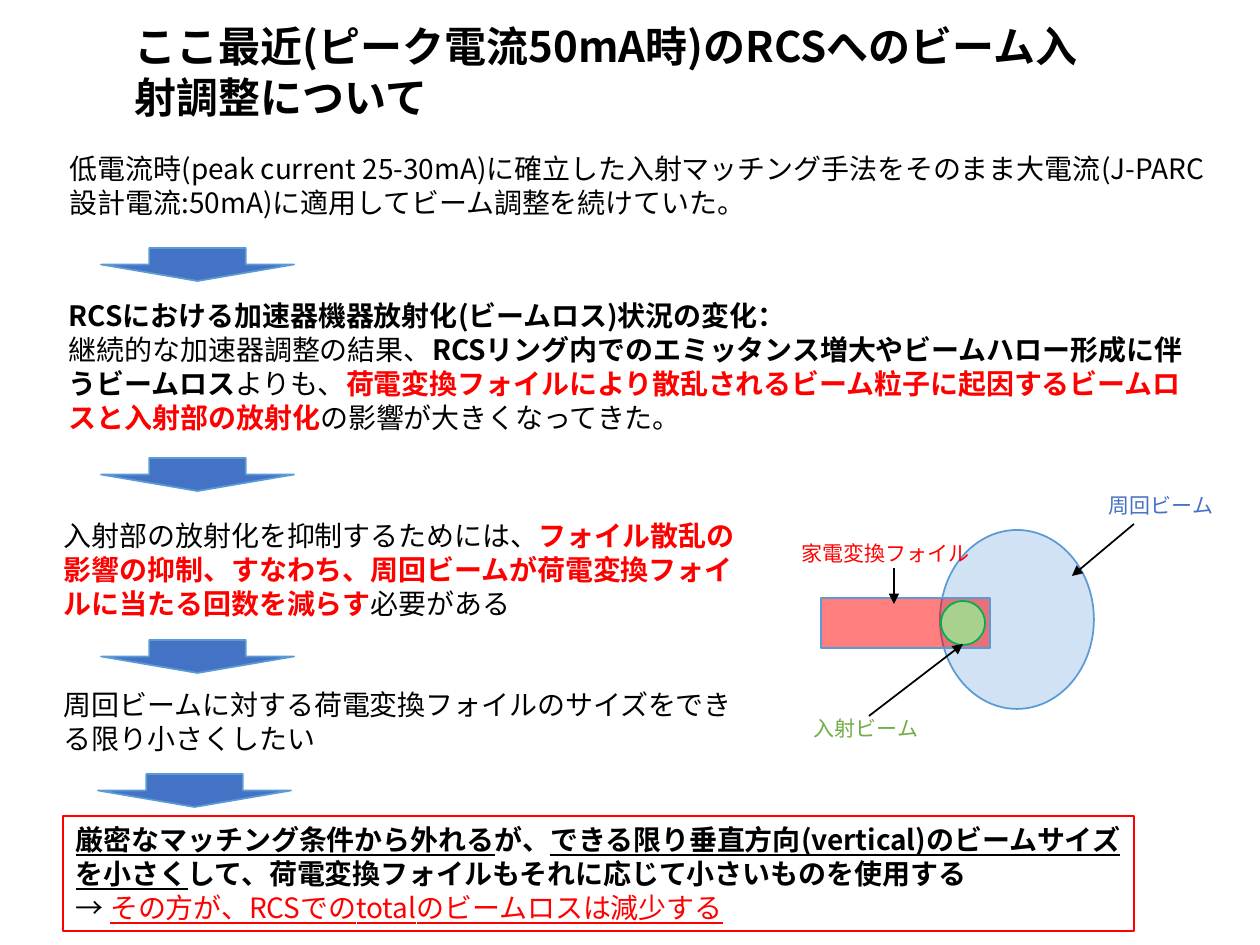
from lxml import etree
from pptx import Presentation
from pptx.dml.color import RGBColor
from pptx.enum.shapes import MSO_CONNECTOR, MSO_SHAPE
from pptx.enum.text import MSO_ANCHOR, MSO_AUTO_SIZE, PP_ALIGN
from pptx.oxml.ns import qn
from pptx.util import Pt

PX = 914400 // 126
FONT = "Noto Sans CJK JP"
LINE_PITCH = 1.21
COLORS = {
    "black": "000000", "red": "FF0000", "blue": "4472C4", "outline": "5B9BD5",
    "beam": "9DC3E6", "injected": "A9D18E", "injected_line": "00B050",
    "green": "70AD47",
}


def emu(*lengths):
    return [n * PX for n in lengths]


def rgb(name):
    return RGBColor.from_string(COLORS[name])


def write(tf, paras, size=16, color="black", inset=6, wrap=True, gap=0,
          anchor=MSO_ANCHOR.TOP):
    """Each run is (text, flags): b = bold, u = underlined, r = red."""
    tf.auto_size = MSO_AUTO_SIZE.NONE
    tf.word_wrap = wrap
    tf.vertical_anchor = anchor
    tf.margin_left = tf.margin_right = inset * PX
    tf.margin_top = tf.margin_bottom = 6 * PX
    for i, runs in enumerate(paras):
        p = tf.add_paragraph() if i else tf.paragraphs[0]
        p.alignment = PP_ALIGN.LEFT
        p.line_spacing = Pt(round(size * LINE_PITCH, 1))
        p.space_before = Pt(gap if i else 0)
        for text, flags in runs:
            r = p.add_run()
            r.text = text
            f = r.font
            f.name, f.size = FONT, Pt(size)
            f.bold, f.underline = "b" in flags, "u" in flags
            f.color.rgb = rgb("red" if "r" in flags else color)
            ea = etree.SubElement(r._r.get_or_add_rPr(), qn("a:ea"))
            ea.set("typeface", FONT)


def add_text(shapes, box, paras, **style):
    tb = shapes.add_textbox(*emu(*box))
    write(tb.text_frame, paras, **style)


def add_shape(shapes, kind, box, fill, line, alpha=None):
    sp = shapes.add_shape(kind, *emu(*box))
    sp.shadow.inherit = False
    if fill:
        sp.fill.solid()
        sp.fill.fore_color.rgb = rgb(fill)
    else:
        sp.fill.background()
    if alpha:
        clr = sp._element.spPr.find(qn("a:solidFill"))[0]
        etree.SubElement(clr, qn("a:alpha")).set("val", str(alpha * 1000))
    sp.line.color.rgb = rgb(line)
    sp.line.width = Pt(1)
    return sp


def add_pointer(shapes, x1, y1, x2, y2):
    c = shapes.add_connector(MSO_CONNECTOR.STRAIGHT, *emu(x1, y1, x2, y2))
    c.line.color.rgb = rgb("black")
    c.line.width = Pt(1)
    etree.SubElement(c.line._get_or_add_ln(), qn("a:tailEnd")).set("type", "triangle")
    etree.SubElement(c._element.spPr, qn("a:effectLst"))


def add_title(s, box, text):
    title = s.shapes.title
    title.left, title.top, title.width, title.height = emu(*box)
    write(title.text_frame, [[(text, "b")]], size=24, inset=13)


def add_step_arrows(s, positions):
    for x, y in positions:
        add_shape(s.shapes, MSO_SHAPE.DOWN_ARROW, (x, y, 193, 33), "blue", "outline")


def add_foil_diagram(s, x, y):
    shapes = s.shapes.add_group_shape().shapes
    # Circulating beam, foil and injected beam
    add_shape(shapes, MSO_SHAPE.OVAL, (x + 144, y + 44, 154, 179), "beam", "outline", 47)
    add_shape(shapes, MSO_SHAPE.RECTANGLE, (x + 25, y + 112, 169, 50), "red", "outline", 50)
    add_shape(shapes, MSO_SHAPE.OVAL, (x + 145, y + 115, 44, 44), "injected", "injected_line")
    # Labels, each with its pointer
    labels = [
        ("周回ビーム", "blue", (307, 0, 118), (338, 38, 276, 90)),
        ("入射ビーム", "green", (12, 223, 118), (73, 230, 167, 158)),
        ("家電変換フォイル", "red", (0, 48, 183), (98, 82, 98, 118)),
    ]
    for text, color, (dx, dy, w), (x1, y1, x2, y2) in labels:
        add_pointer(shapes, x + x1, y + y1, x + x2, y + y2)
        add_text(shapes, (x + dx, y + dy, w, 38), [[(text, "")]],
                 size=12, color=color, wrap=False)


def add_conclusion(s, box, paras):
    sp = add_shape(s.shapes, MSO_SHAPE.RECTANGLE, box, None, "red")
    write(sp.text_frame, paras, inset=13, anchor=MSO_ANCHOR.MIDDLE)


def main():
    prs = Presentation()
    prs.slide_width, prs.slide_height = emu(1260, 945)
    s = prs.slides.add_slide(prs.slide_layouts[5])

    add_title(s, (122, 14, 987, 115),
              "ここ最近(ピーク電流50mA時)のRCSへのビーム入射調整について")

    # Background and change in the situation
    add_text(s.shapes, (64, 145, 1158, 81), [[
        ("低電流時(peak current 25-30mA)に確立した入射マッチング手法をそのまま大電流"
         "(J-PARC設計電流:50mA)に適用してビーム調整を続けていた。", "")]])
    add_text(s.shapes, (63, 292, 1134, 152), [
        [("RCSにおける加速器機器放射化(ビームロス)状況の変化：", "b")],
        [("継続的な加速器調整の結果、", ""),
         ("RCSリング内でのエミッタンス増大やビームハロー形成に伴うビームロス", "b"),
         ("よりも、", ""),
         ("荷電変換フォイルにより散乱されるビーム粒子に起因するビームロスと入射部の放射化", "br"),
         ("の影響が大きくなってきた。", "")]])

    # Requirements, two lines apart to leave room for an arrow
    add_text(s.shapes, (58, 512, 693, 251), [
        [("入射部の放射化を抑制するためには、", ""),
         ("フォイル散乱の影響の抑制、すなわち、周回ビームが荷電変換フォイルに当たる回数を減らす", "br"),
         ("必要がある", "")],
        [("周回ビームに対する荷電変換フォイルのサイズをできる限り小さくしたい", "")]],
        gap=round(2 * 16 * LINE_PITCH, 1))

    add_step_arrows(s, [(101, 248), (101, 458), (101, 640), (98, 774)])
    add_foil_diagram(s, 796, 486)

    add_conclusion(s, (63, 816, 1071, 115), [
        [("厳密なマッチング条件から外れる", "bu"), ("が、", "b"),
         ("できる限り垂直方向(vertical)のビームサイズを小さく", "bu"),
         ("して、荷電変換フォイルもそれに応じて小さいものを使用する", "b")],
        [("→ ", ""), ("その方が、RCSでのtotalのビームロスは減少する", "ur")]])

    prs.save("out.pptx")


if __name__ == "__main__":
    main()
